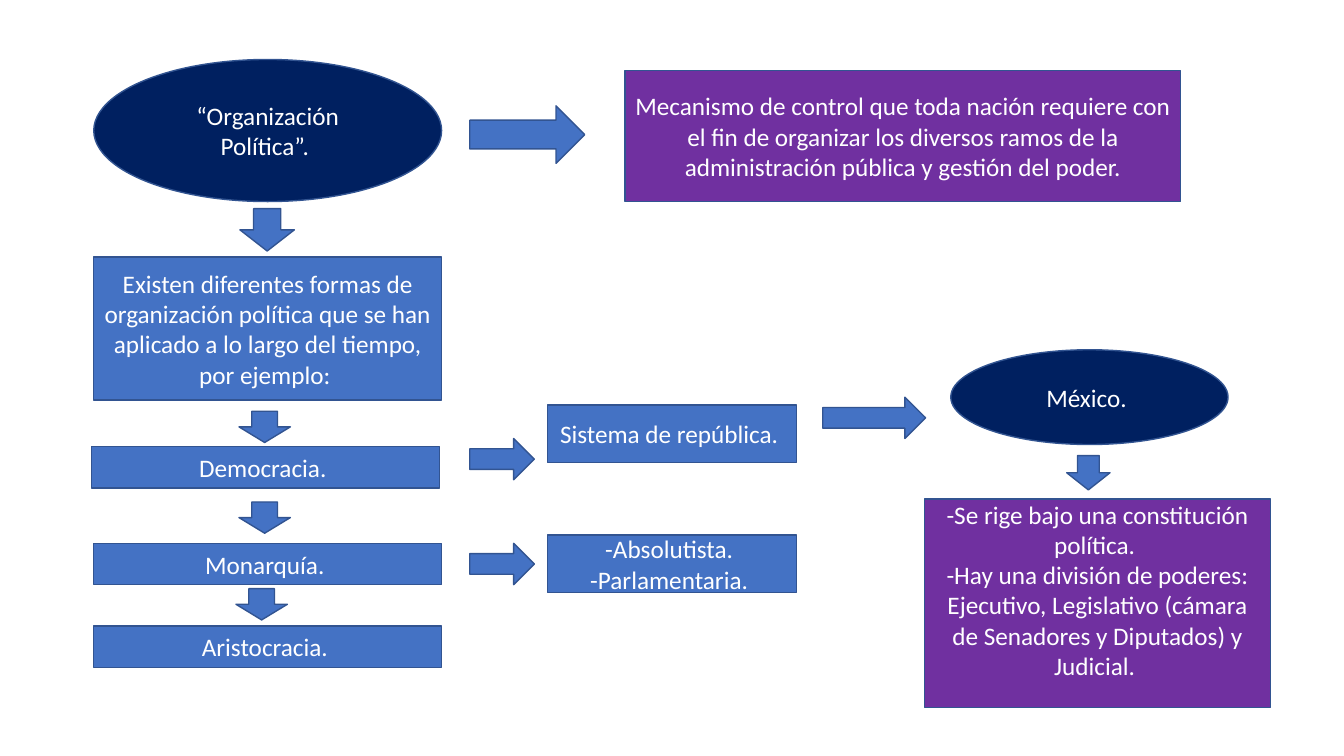
from pptx import Presentation
from pptx import util as u
from pptx.dml.color import RGBColor
from pptx.enum import shapes, text

NAVY, PURPLE, BLUE, OUTLINE, WHITE = "002060", "7030A0", "4472C4", "325491", "FFFFFF"
KIND = shapes.MSO_SHAPE
FORM_HEIGHT = 0.41


def color(hex_value):
    return RGBColor.from_string(hex_value)


def add_box(slide, kind, left, top, width, height, fill=BLUE):
    shape = slide.shapes.add_shape(kind, *map(u.Inches, (left, top, width, height)))
    shape.shadow.inherit = False
    shape.fill.solid()
    shape.fill.fore_color.rgb = color(fill)
    shape.line.color.rgb = color(OUTLINE)
    shape.line.width = u.Pt(1)
    return shape


def write(shape, *lines, size=18, font="Calibri", ink=WHITE,
          anchor=text.MSO_ANCHOR.MIDDLE, margin_top=0.05):
    frame = shape.text_frame
    frame.word_wrap = True
    frame.vertical_anchor = anchor
    frame.margin_top = u.Inches(margin_top)
    for index, line in enumerate(lines):
        paragraph = frame.add_paragraph() if index else frame.paragraphs[0]
        paragraph.alignment = text.PP_ALIGN.CENTER
        run = paragraph.add_run()
        run.text = line
        run.font.size = u.Pt(size)
        run.font.name = font
        run.font.color.rgb = color(ink)


def add_definition(slide, left, top, width, height):
    """Topic, arrow and definition across the top."""
    topic = add_box(slide, KIND.OVAL, left, top, 3.45, height, NAVY)
    write(topic, "“Organización Política”. ")
    add_box(slide, KIND.RIGHT_ARROW, left + 3.73, top + 0.46, 1.14, 0.57)
    definition = add_box(slide, KIND.RECTANGLE, left + 5.27, top + 0.11,
                         width - 5.27, height - 0.11, PURPLE)
    write(definition, "Mecanismo de control que toda nación requiere con el fin de "
          "organizar los diversos ramos de la administración pública y gestión del poder.")


def add_forms(slide, left, top, width):
    """Column with the forms of political organization."""
    add_box(slide, KIND.DOWN_ARROW, left + 1.45, top, 0.54, 0.42)
    intro = add_box(slide, KIND.RECTANGLE, left, top + 0.48, width, 1.42)
    write(intro, "Existen diferentes formas de organización política que se han "
          "aplicado a lo largo del tiempo, por ejemplo: ")
    forms = [  # name, shift, offset, arrow shift, arrow offset
        ("Democracia. ", -0.02, 2.36, 1.44, 2.01),
        ("Monarquía. ", 0, 3.32, 1.44, 2.91),
        ("Aristocracia. ", 0, 4.14, 1.41, 3.77),
    ]
    for name, shift, offset, arrow_shift, arrow_offset in forms:
        add_box(slide, KIND.DOWN_ARROW, left + arrow_shift, top + arrow_offset, 0.51, 0.31)
        form = add_box(slide, KIND.RECTANGLE, left + shift, top + offset, width, FORM_HEIGHT)
        write(form, name)


def add_branch(slide, left, top, width, height, arrow_offset, *lines):
    """Arrow from a form to its variants."""
    add_box(slide, KIND.RIGHT_ARROW, left, top + arrow_offset, 0.64, FORM_HEIGHT)
    variant = add_box(slide, KIND.RECTANGLE, left + 0.77, top, width - 0.77, height)
    write(variant, *lines)


def add_mexico(slide, left, top, width, height):
    """Example country and its features."""
    add_box(slide, KIND.RIGHT_ARROW, left, top + 0.47, 1.02, FORM_HEIGHT)
    country = add_box(slide, KIND.OVAL, left + 1.27, top, 2.75, 0.94, NAVY)
    write(country, "México. ")
    add_box(slide, KIND.DOWN_ARROW, left + 2.42, top + 1.05, 0.43, 0.34)
    features = add_box(slide, KIND.RECTANGLE, left + 1.01, top + 1.48,
                       width - 1.01, height - 1.48, PURPLE)
    write(features, "-Se rige bajo una constitución política. ",
          "-Hay una división de poderes: Ejecutivo, Legislativo (cámara de "
          "Senadores y Diputados) y Judicial. ",
          anchor=text.MSO_ANCHOR.TOP, margin_top=0)


def main():
    presentation = Presentation()
    presentation.slide_width = u.Inches(13.33)
    presentation.slide_height = u.Inches(7.5)
    slide = presentation.slides.add_slide(presentation.slide_layouts[6])

    add_definition(slide, 0.93, 0.59, 10.78, 1.41)
    add_forms(slide, 0.93, 2.07, 3.45)
    add_branch(slide, 4.66, 4.02, 3.24, 0.57, 0.33, "Sistema de república. ")
    add_branch(slide, 4.66, 5.31, 3.24, 0.57, 0.08, "-Absolutista. ", "-Parlamentaria. ")
    add_mexico(slide, 8.16, 3.47, 4.44, 3.55)

    presentation.save("out.pptx")


if __name__ == "__main__":
    main()
